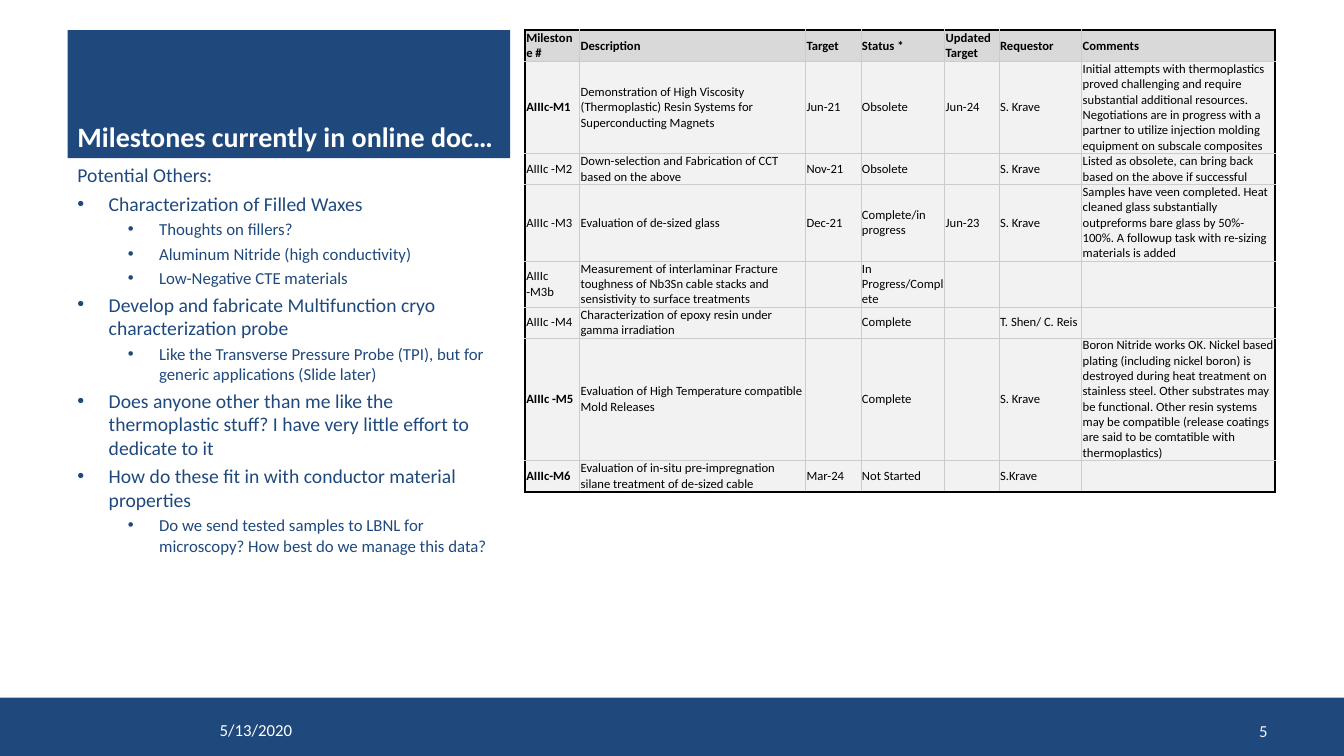
"""Builds the milestone status slide with its table and list of open ideas."""
from lxml.etree import SubElement
from pptx import Presentation
from pptx.dml.color import RGBColor
from pptx.enum.shapes import MSO_SHAPE
from pptx.enum.text import MSO_ANCHOR, PP_ALIGN
from pptx.oxml.ns import qn
from pptx.util import Inches, Pt

COLORS = {
    "navy": "1F497D", "white": "FFFFFF", "black": "000000",
    "grid": "CCCCCC", "header": "D9D9D9", "body": "F2F2F2",
}


def style(para, size, color, bold=False):
    para.font.name = "Calibri"
    para.font.size = Pt(size)
    para.font.bold = bold
    para.font.color.rgb = RGBColor.from_string(COLORS[color])


def add_border(cell, side, outer):
    line = SubElement(cell._tc.get_or_add_tcPr(), qn(f"a:ln{side}"), w=str(Pt(1.5 if outer else 0.75)))
    fill = SubElement(line, qn("a:solidFill"))
    SubElement(fill, qn("a:srgbClr"), val=COLORS["black" if outer else "grid"])


deck = Presentation()
deck.slide_width, deck.slide_height = Inches(13.33), Inches(7.5)
page = deck.slides.add_slide(deck.slide_layouts[6])

panels = []
for left, top, width, height in [(0, 6.92, 13.33, 0.6), (0.67, 0.3, 4.39, 1.27)]:
    panel = page.shapes.add_shape(
        MSO_SHAPE.RECTANGLE, Inches(left), Inches(top), Inches(width), Inches(height))
    panel.shadow.inherit = False
    panel.fill.solid()
    panel.fill.fore_color.rgb = RGBColor.from_string(COLORS["navy"])
    panel.line.fill.background()
    panels.append(panel)

title = panels[1].text_frame
title.word_wrap = True
title.vertical_anchor = MSO_ANCHOR.BOTTOM
title.text = "Milestones currently in online doc…"
title.paragraphs[0].alignment = PP_ALIGN.LEFT
style(title.paragraphs[0], 20, "white", True)

column_widths = [0.54, 2.24, 0.55, 0.83, 0.54, 0.82, 1.92]
row_heights = [0.31, 0.77, 0.31, 0.52, 0.37, 0.25, 0.92, 0.31]
milestones = [
    ["Milestone #", "Description", "Target", "Status *", "Updated Target", "Requestor", "Comments"],
    ["AIIIc-M1",
     "Demonstration of High Viscosity (Thermoplastic) Resin Systems for Superconducting Magnets",
     "Jun-21", "Obsolete", "Jun-24", "S. Krave",
     "Initial attempts with thermoplastics proved challenging and require substantial additional "
     "resources. Negotiations are in progress with a partner to utilize injection molding "
     "equipment on subscale composites"],
    ["AIIIc -M2", "Down-selection and Fabrication of CCT based on the above",
     "Nov-21", "Obsolete", "", "S. Krave",
     "Listed as obsolete, can bring back based on the above if successful"],
    ["AIIIc -M3", "Evaluation of de-sized glass",
     "Dec-21", "Complete/in progress", "Jun-23", "S. Krave",
     "Samples have veen completed. Heat cleaned glass substantially outpreforms bare glass by "
     "50%-100%. A followup task with re-sizing materials is added"],
    ["AIIIc -M3b",
     "Measurement of interlaminar Fracture toughness of Nb3Sn cable stacks and sensistivity to "
     "surface treatments",
     "", "In Progress/Complete", "", "", ""],
    ["AIIIc -M4", "Characterization of epoxy resin under gamma irradiation",
     "", "Complete", "", "T. Shen/ C. Reis", ""],
    ["AIIIc -M5", "Evaluation of High Temperature compatible Mold Releases",
     "", "Complete", "", "S. Krave",
     "Boron Nitride works OK. Nickel based plating (including nickel boron) is destroyed during "
     "heat treatment on stainless steel. Other substrates may be functional. Other resin systems "
     "may be compatible (release coatings are said to be comtatible with thermoplastics)"],
    ["AIIIc-M6", "Evaluation of in-situ pre-impregnation silane treatment of de-sized cable",
     "Mar-24", "Not Started", "", "S.Krave", ""],
]
bold_milestones = {"AIIIc-M1", "AIIIc -M5", "AIIIc-M6"}
last_row, last_column = len(row_heights) - 1, len(column_widths) - 1

table = page.shapes.add_table(
    len(row_heights), len(column_widths), Inches(5.21), Inches(0.3),
    Inches(sum(column_widths)), Inches(sum(row_heights))).table
table.first_row = table.horz_banding = False
for column, width in zip(table.columns, column_widths):
    column.width = Inches(width)
for row, height in zip(table.rows, row_heights):
    row.height = Inches(height)

for r, values in enumerate(milestones):
    for c, value in enumerate(values):
        cell = table.cell(r, c)
        cell.text = value
        cell.vertical_anchor = MSO_ANCHOR.MIDDLE
        cell.margin_left = cell.margin_right = Inches(0.01)
        cell.margin_top = cell.margin_bottom = 0
        add_border(cell, "L", c == 0)
        add_border(cell, "R", c == last_column)
        add_border(cell, "T", r == 0)
        add_border(cell, "B", r == last_row)
        cell.fill.solid()
        cell.fill.fore_color.rgb = RGBColor.from_string(COLORS["body" if r else "header"])
        style(cell.text_frame.paragraphs[0], 9, "black", r == 0 or value in bold_milestones)

ideas = [
    (None, "Potential Others:"),
    (0, "Characterization of Filled Waxes"),
    (1, "Thoughts on fillers?"),
    (1, "Aluminum Nitride (high conductivity)"),
    (1, "Low-Negative CTE materials"),
    (0, "Develop and fabricate Multifunction cryo characterization probe"),
    (1, "Like the Transverse Pressure Probe (TPI), but for generic applications (Slide later)"),
    (0, "Does anyone other than me like the thermoplastic stuff? I have very little effort to "
        "dedicate to it"),
    (0, "How do these fit in with conductor material properties"),
    (1, "Do we send tested samples to LBNL for microscopy? How best do we manage this data?"),
]
box = page.shapes.add_textbox(Inches(0.67), Inches(1.57), Inches(4.39), Inches(5.13))
box.text_frame.word_wrap = True
for index, (level, text) in enumerate(ideas):
    para = box.text_frame.add_paragraph() if index else box.text_frame.paragraphs[0]
    para.text = text
    if level is not None:
        para.level = level
        para.space_before = Pt(2.9 if level else 3.4)
        properties = para._p.get_or_add_pPr()
        properties.set("marL", str(Inches(0.31 + 0.5 * level)))
        properties.set("indent", str(Inches(-0.31)))
        SubElement(properties, qn("a:buFont"), typeface="Arial")
        SubElement(properties, qn("a:buChar"), char="•")
    style(para, 12 if level else 14, "navy")

for text, left, top, width, alignment, color in [
    ("5/13/2020", 2.08, 7.04, 1.7, PP_ALIGN.LEFT, "white"),
    ("5", 9.56, 7.05, 3.11, PP_ALIGN.RIGHT, "body"),
]:
    box = page.shapes.add_textbox(Inches(left), Inches(top), Inches(width), Inches(0.4))
    box.text_frame.word_wrap = True
    box.text_frame.vertical_anchor = MSO_ANCHOR.MIDDLE
    box.text_frame.text = text
    para = box.text_frame.paragraphs[0]
    para.alignment = alignment
    style(para, 12, color)

deck.save("out.pptx")
